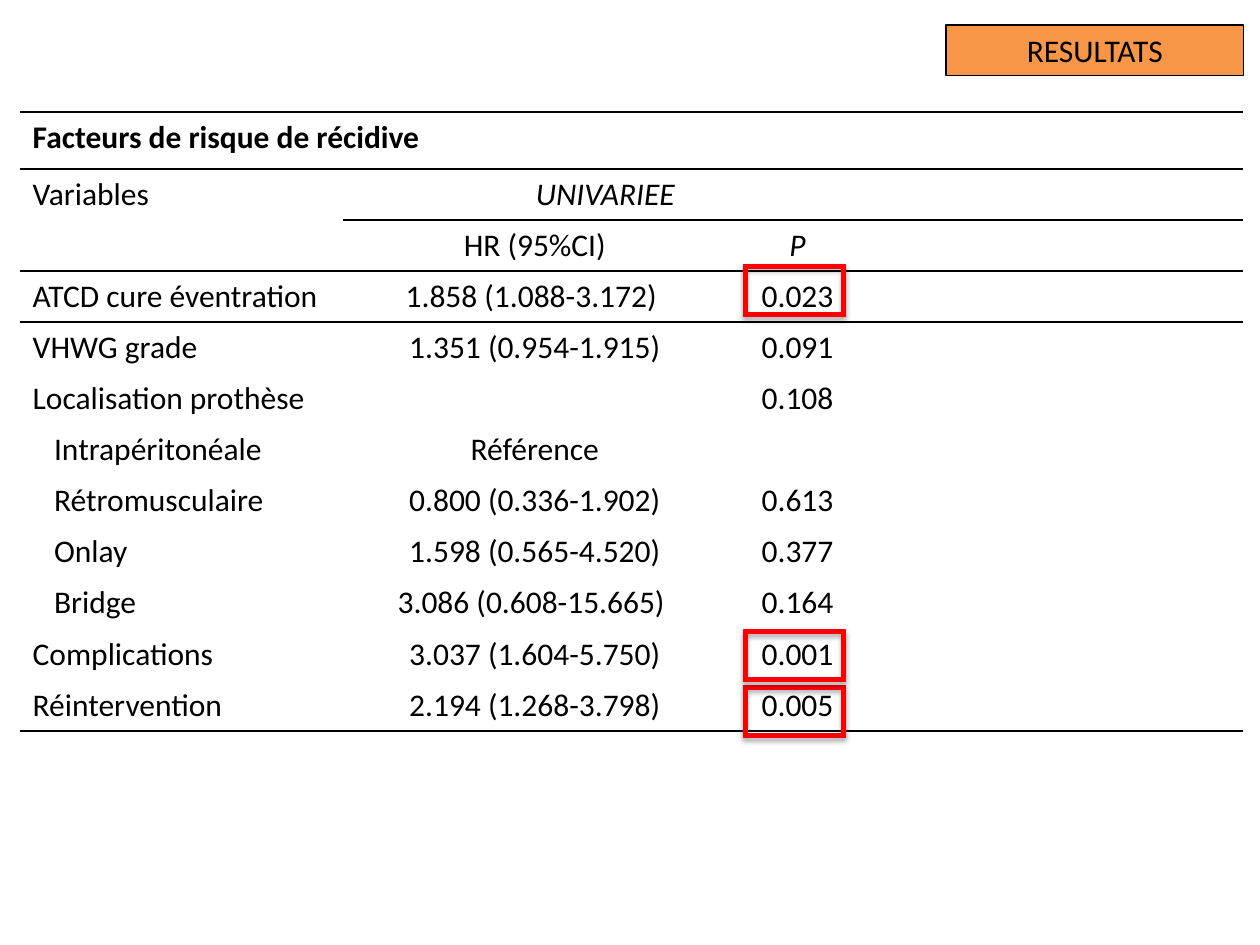
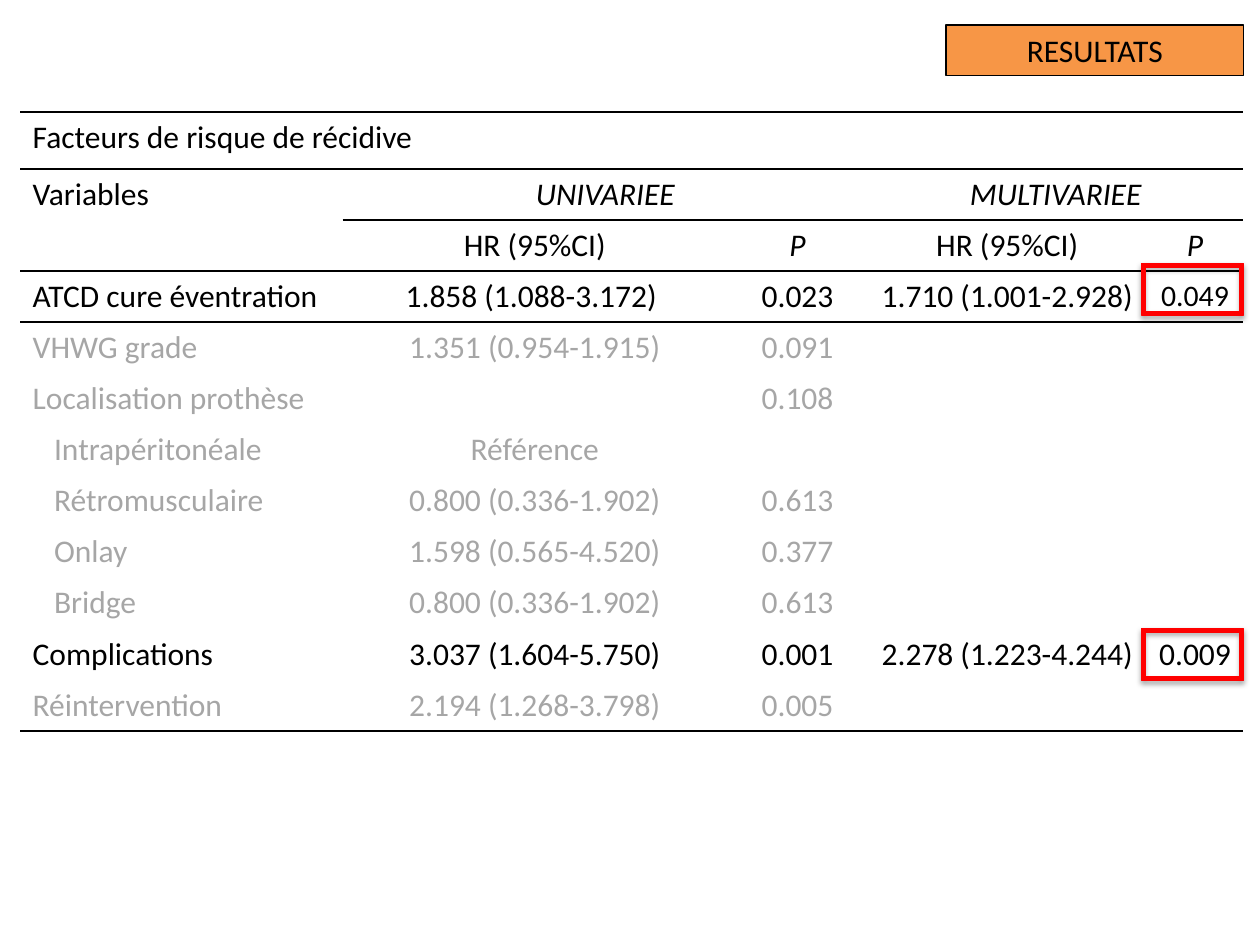
import pptx
import pptx.util
import pptx.dml.color
import pptx.enum.shapes
import pptx.enum.text
import pptx.oxml
import pptx.oxml.ns

Inches = pptx.util.Inches
Pt = pptx.util.Pt
PP_ALIGN = pptx.enum.text.PP_ALIGN
MIDDLE = pptx.enum.text.MSO_ANCHOR.MIDDLE
SHAPES = pptx.enum.shapes.MSO_SHAPE

COLORS = {"text": "000000", "muted": "A6A6A6", "banner": "F79646", "highlight": "FF0000"}
FONT = "Calibri"
NO_GRID_STYLE = "{2D5ABB26-0587-4C30-8999-92F81FD0307C}"

COL_WIDTHS = [2.56, 3.05, 1.12, 2.21, 0.77]
ROW_HEIGHTS = [0.45, 0.4, 0.4] + [3.65 / 9] * 9
UNIVARIATE = [
    ("ATCD cure éventration", "1.858 (1.088-3.172) ", "0.023"),
    ("VHWG grade", "1.351 (0.954-1.915)", "0.091"),
    ("Localisation prothèse", "", "0.108"),
    ("Intrapéritonéale", "Référence", ""),
    ("Rétromusculaire", "0.800 (0.336-1.902)", "0.613"),
    ("Onlay", "1.598 (0.565-4.520)", "0.377"),
    ("Bridge", "3.086 (0.608-15.665) ", "0.164"),
    ("Complications", "3.037 (1.604-5.750)", "0.001"),
    ("Réintervention", "2.194 (1.268-3.798)", "0.005"),
]
MULTIVARIATE = {
    "ATCD cure éventration": ("1.710 (1.001-2.928)", "0.049"),
    "Complications": ("2.278 (1.223-4.244)", "0.009"),
}
BRIDGE_IN_MULTIVARIATE = ("Bridge", "0.800 (0.336-1.902)", "0.613")
PROSTHESIS_SITES = {"Intrapéritonéale", "Rétromusculaire", "Onlay", "Bridge"}


def rgb(name):
    return pptx.dml.color.RGBColor.from_string(COLORS[name])


def style(p, color="text", size=18, bold=False, italic=False, align=PP_ALIGN.CENTER):
    p.alignment = align
    f = p.font
    f.name, f.size, f.bold, f.italic = FONT, Pt(size), bold, italic
    f.color.rgb = rgb(color)


def add_box(s, shape_type, left, top, width, height, fill, line, line_width):
    sp = s.shapes.add_shape(shape_type, Inches(left), Inches(top), Inches(width), Inches(height))
    sp.shadow.inherit = False
    sp.fill.solid()
    sp.fill.fore_color.rgb = rgb(fill)
    sp.line.color.rgb = rgb(line)
    sp.line.width = Pt(line_width)
    return sp


def add_banner(s):
    sp = add_box(s, SHAPES.RECTANGLE, 7.51, 0.2, 2.36, 0.4, "banner", "text", 1)
    p = sp.text_frame.paragraphs[0]
    p.text = "RESULTATS"
    style(p)


def add_highlight(s, left, top):
    sp = add_box(s, SHAPES.FRAME, left, top, 0.81, 0.41, "highlight", "highlight", 0.75)
    sp.adjustments[0] = 0.07
    effects = sp._element.spPr.find(pptx.oxml.ns.qn("a:effectLst"))
    effects.append(pptx.oxml.parse_xml(
        f'<a:outerShdw {pptx.oxml.ns.nsdecls("a")} blurRad="{Pt(3.1)}" dist="{Pt(1.8)}" '
        f'dir="5400000" rotWithShape="0"><a:srgbClr val="{COLORS["text"]}">'
        '<a:alpha val="35000"/></a:srgbClr></a:outerShdw>'))


def add_borders(cell, top, bottom):
    tcPr = cell._tc.get_or_add_tcPr()
    for tag, shown in (("lnT", top), ("lnB", bottom)):
        if shown:
            tcPr.append(pptx.oxml.parse_xml(
                f'<a:{tag} {pptx.oxml.ns.nsdecls("a")} w="{Pt(1)}"><a:solidFill>'
                f'<a:srgbClr val="{COLORS["text"]}"/></a:solidFill></a:{tag}>'))


def set_cell(cell, text, **look):
    p = cell.text_frame.paragraphs[0]
    p.text = text
    style(p, **look)


def make_table(s):
    table = s.shapes.add_table(
        len(ROW_HEIGHTS), len(COL_WIDTHS), Inches(0.16), Inches(0.89),
        Inches(sum(COL_WIDTHS)), Inches(sum(ROW_HEIGHTS))).table
    table.first_row = table.horz_banding = False
    table._tbl.tblPr.find(pptx.oxml.ns.qn("a:tableStyleId")).text = NO_GRID_STYLE
    for column, width in zip(table.columns, COL_WIDTHS):
        column.width = Inches(width)
    last = len(ROW_HEIGHTS) - 1
    for r, height in enumerate(ROW_HEIGHTS):
        table.rows[r].height = Inches(height)
        for c in range(len(COL_WIDTHS)):
            cell = table.cell(r, c)
            add_borders(cell, top=r in (0, 1, 3) or (r == 2 and c > 0),
                        bottom=r in (0, 2, last) or (r == 1 and c > 0))
            cell.fill.background()
    for first, end in (((0, 0), (0, 4)), ((1, 0), (2, 0)), ((1, 1), (1, 2)), ((1, 3), (1, 4))):
        table.cell(*first).merge(table.cell(*end))
    return table


def fill_header(table, analyses, bold_title):
    set_cell(table.cell(0, 0), "Facteurs de risque de récidive", bold=bold_title, align=PP_ALIGN.LEFT)
    set_cell(table.cell(1, 0), "Variables", align=PP_ALIGN.LEFT)
    for c, analysis in zip((1, 3), analyses):
        set_cell(table.cell(1, c), analysis, italic=True)
        set_cell(table.cell(2, c), "HR (95%CI)")
        set_cell(table.cell(2, c + 1), "P", italic=True)


def fill_rows(table, rows, multivariate):
    for r, (variable, *values) in enumerate(rows, 3):
        color = "muted" if multivariate and variable not in multivariate else "text"
        label = table.cell(r, 0)
        set_cell(label, variable, color=color, align=PP_ALIGN.LEFT)
        if variable in PROSTHESIS_SITES:
            label.margin_left = Inches(0.27)
        for c, value in enumerate([*values, *multivariate.get(variable, ())], 1):
            cell = table.cell(r, c)
            cell.vertical_anchor = MIDDLE
            cell.margin_left = cell.margin_right = Inches(0.07)
            cell.margin_top = cell.margin_bottom = 0
            if value:
                set_cell(cell, value, color=color, size=17 if value == "0.049" else 18)


def add_results_slide(prs, analyses, rows, multivariate, highlights, bold_title=False):
    s = prs.slides.add_slide(prs.slide_layouts[6])
    add_banner(s)
    table = make_table(s)
    fill_header(table, analyses, bold_title)
    fill_rows(table, rows, multivariate)
    for left, top in highlights:
        add_highlight(s, left, top)


def main():
    prs = pptx.Presentation()
    prs.slide_width, prs.slide_height = Inches(10), Inches(7.5)
    add_results_slide(prs, ["UNIVARIEE"], UNIVARIATE, {},
                      [(5.9, top) for top in (2.1, 5.44, 5)], bold_title=True)
    rows = [BRIDGE_IN_MULTIVARIATE if row[0] == "Bridge" else row for row in UNIVARIATE]
    add_results_slide(prs, ["UNIVARIEE", "MULTIVARIEE"], rows, MULTIVARIATE,
                      [(9.06, top) for top in (2.09, 4.99)])
    prs.save("out.pptx")


if __name__ == "__main__":
    main()
